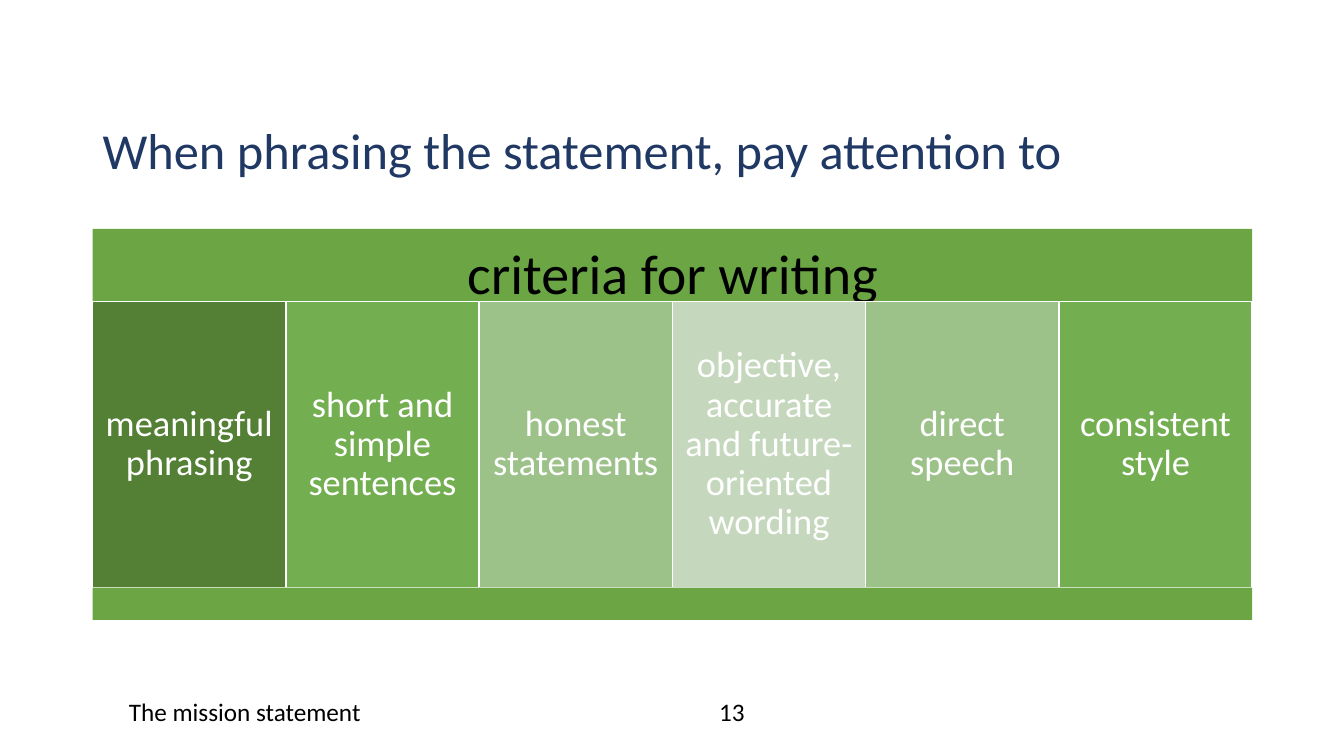
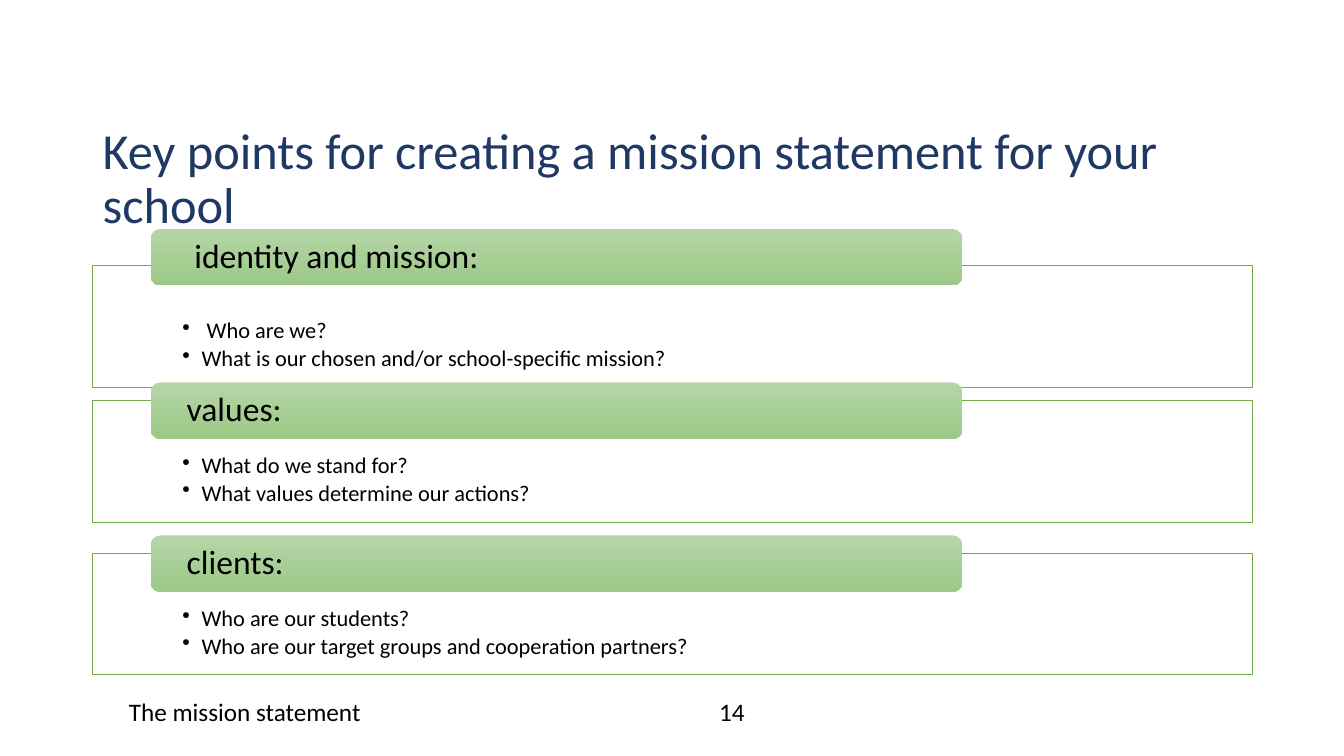
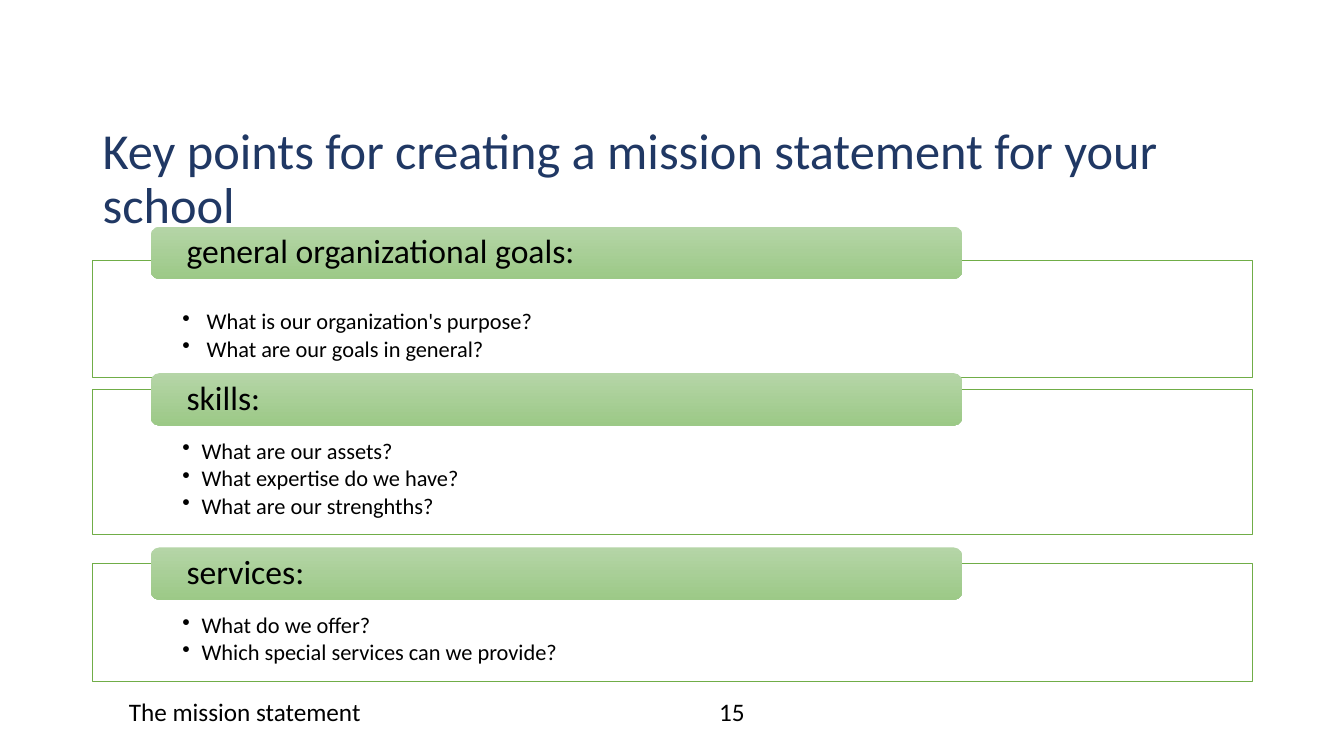
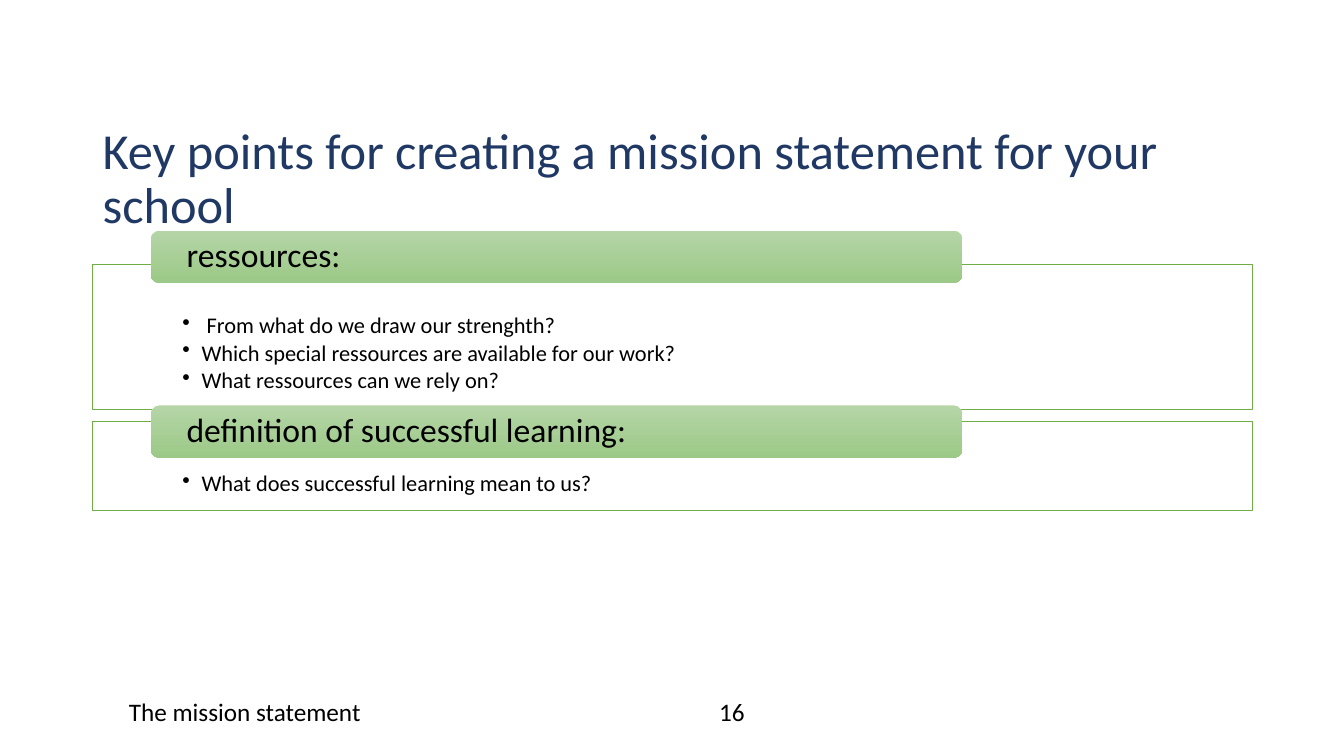
"""Build four slides on wording and key points of a school mission statement."""
from pptx import Presentation
from pptx.dml.color import RGBColor
from pptx.enum.shapes import MSO_SHAPE
from pptx.enum.text import MSO_ANCHOR, PP_ALIGN
from pptx.oxml.ns import qn
from pptx.util import Inches, Pt

RECT, ROUND = MSO_SHAPE.RECTANGLE, MSO_SHAPE.ROUNDED_RECTANGLE
TOP, MID = MSO_ANCHOR.TOP, MSO_ANCHOR.MIDDLE
LEFT, CENTER = PP_ALIGN.LEFT, PP_ALIGN.CENTER

FONT = "Calibri"
NAVY, BLACK, WHITE = "203864", "000000", "FFFFFF"
BAND, EDGE = "6BA544", "70AD47"
FADE = ("B5D5A7", "9CC987")

FOOTER = "The mission statement"
FIRST = 13
KEY = "Key points for creating a mission statement for your school"
RULES = "When phrasing the statement, pay attention to"
HEAD = "criteria for writing"
CELLS = [
    ("meaningful phrasing", "538035"),
    ("short and simple sentences", "73AE51"),
    ("honest statements", "9CC189"),
    ("objective, accurate and future-oriented wording", "C5D8BD"),
    ("direct speech", "9CC189"),
    ("consistent style", "73AE51"),
]
PAGES = [
    dict(top=2.63, bar=0.56, cards=[
        (" identity and mission:",
         [" Who are we?", "What is our chosen and/or school-specific mission?"]),
        ("values:",
         ["What do we stand for?", "What values determine our actions?"]),
        ("clients:",
         ["Who are our students?",
          "Who are our target groups and cooperation partners?"]),
    ]),
    dict(top=2.58, bar=0.52, cards=[
        ("general organizational goals:",
         [" What is our organization's purpose?",
          " What are our goals in general?"]),
        ("skills:",
         ["What are our assets?", "What expertise do we have?",
          "What are our strenghths?"]),
        ("services:",
         ["What do we offer?", "Which special services can we provide?"]),
    ]),
    dict(top=2.62, bar=0.52, cards=[
        ("ressources:",
         [" From what do we draw our strenghth?",
          "Which special ressources are available for our work?",
          "What ressources can we rely on?"]),
        ("definition of successful learning:",
         ["What does successful learning mean to us?"]),
    ]),
]

WIDE, HIGH = 13.33, 7.5
SIDE, SPAN = 0.92, 11.5
LINE = 0.28


def color(code):
    return RGBColor.from_string(code)


def write(shape, lines, size=18, ink=BLACK, align=LEFT, anchor=TOP,
          pad=(0.1, 0.05, 0.1, 0.05), lead=0.9, after=0, mark=None):
    frame = shape.text_frame
    frame.word_wrap = True
    frame.vertical_anchor = anchor
    (frame.margin_left, frame.margin_top,
     frame.margin_right, frame.margin_bottom) = map(Inches, pad)
    for i, line in enumerate(lines):
        para = frame.add_paragraph() if i else frame.paragraphs[0]
        if mark:
            props = para._p.get_or_add_pPr()
            props.set("marL", str(Inches(0.19)))
            props.set("indent", str(-Inches(0.19)))
            bullet = props.makeelement(qn("a:buChar"), {"char": mark})
            props.append(bullet)
        para.alignment = align
        para.line_spacing = lead
        para.space_after = Pt(after)
        run = para.add_run()
        run.text = line
        run.font.name = FONT
        run.font.size = Pt(size)
        run.font.color.rgb = color(ink)


def label(slide, at, text, **style):
    write(slide.shapes.add_textbox(*map(Inches, at)), [text], **style)


def block(slide, at, fill, kind=RECT, edge=None, width=1):
    shape = slide.shapes.add_shape(kind, *map(Inches, at))
    shape.shadow.inherit = False
    if isinstance(fill, tuple):
        shape.fill.gradient()
        shape.fill.gradient_angle = 270
        for stop, code in zip(shape.fill.gradient_stops, fill):
            stop.color.rgb = color(code)
    else:
        shape.fill.solid()
        shape.fill.fore_color.rgb = color(fill)
    if edge:
        shape.line.color.rgb = color(edge)
        shape.line.width = Pt(width)
    else:
        shape.line.fill.background()
    return shape


def page(deck, title):
    slide = deck.slides.add_slide(deck.slide_layouts[6])
    number = FIRST + len(deck.slides) - 1
    label(slide, (SIDE, 1.2, SPAN, 0.97), title, size=36, ink=NAVY)
    label(slide, (1.18, 6.86, 4.5, 0.4), FOOTER, lead=1)
    label(slide, (5.76, 6.86, 3, 0.4), str(number), align=CENTER, lead=1)
    return slide


def criteria(deck):
    slide = page(deck, RULES)
    head = block(slide, (SIDE, 2.27, SPAN, 0.95), BAND)
    write(head, [HEAD], size=40, align=CENTER, anchor=MID, pad=[0.17] * 4)
    step, top, tall = SPAN / len(CELLS), 2.99, 2.84
    for i, (text, fill) in enumerate(CELLS):
        cell = block(slide, (SIDE + i * step, top, step, tall), fill, edge=WHITE)
        write(cell, [text], size=26, ink=WHITE, align=CENTER, anchor=MID,
              pad=[0.11] * 4)
    block(slide, (SIDE, top + tall, SPAN, 0.32), BAND)


def points(deck, top, bar, cards):
    slide = page(deck, KEY)
    for i, (name, asks) in enumerate(cards):
        lift, gap = (0.31, 0.55) if i else (0.64, 0.23)
        tall = 1.16 * bar + LINE * len(asks)
        box = block(slide, (SIDE, top, SPAN, tall), WHITE, edge=EDGE, width=0.5)
        write(box, asks, size=16, after=2.4, mark="•",
              pad=(0.89, bar - 0.02, 0.89, 0.12))
        tab = block(slide, (SIDE + SPAN / 20, top - lift * bar, SPAN * 0.7, bar),
                    FADE, kind=ROUND)
        write(tab, [name], size=24, anchor=MID, pad=(0.33, 0, 0.33, 0))
        top += tall + gap * bar


def main():
    deck = Presentation()
    deck.slide_width, deck.slide_height = Inches(WIDE), Inches(HIGH)
    criteria(deck)
    for item in PAGES:
        points(deck, **item)
    deck.save("out.pptx")


if __name__ == "__main__":
    main()
